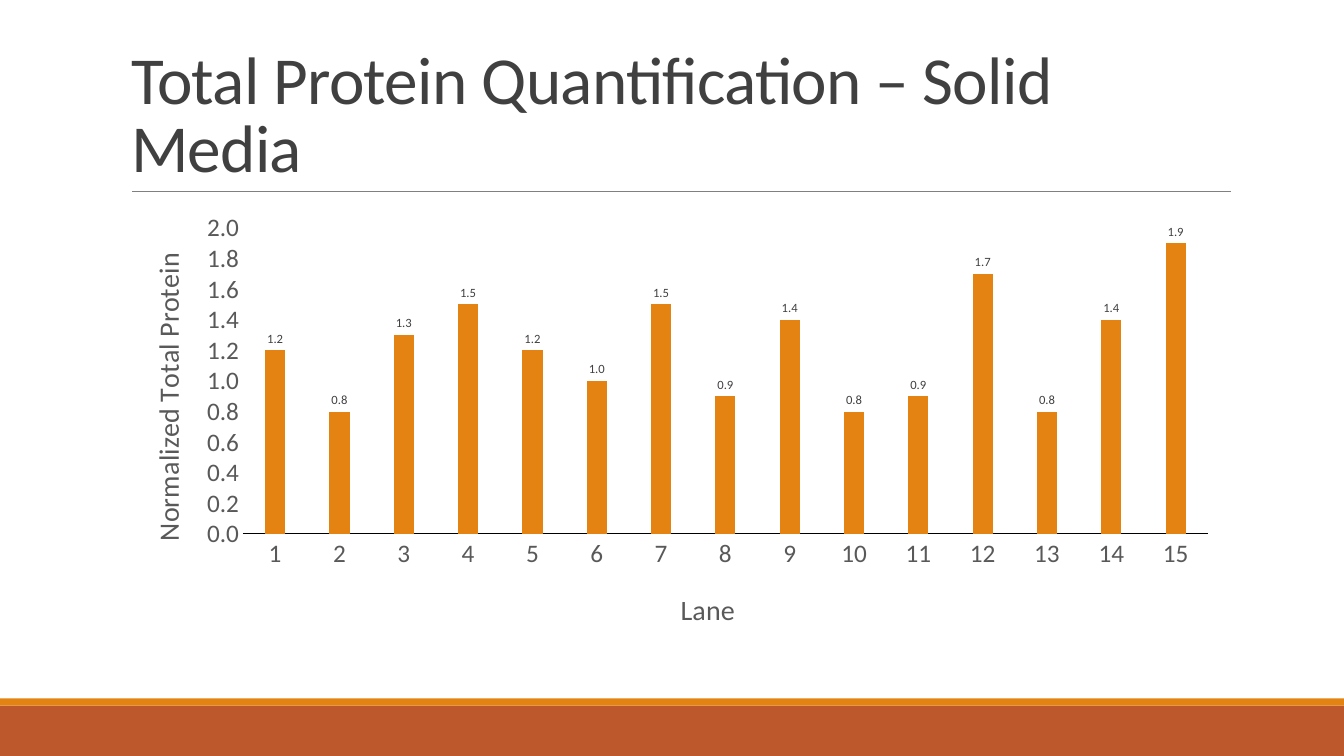
from lxml import etree
from pptx import Presentation
from pptx.chart.data import CategoryChartData
from pptx.dml.color import RGBColor
from pptx.enum import chart as ch, shapes, text
from pptx.oxml import ns
from pptx.util import Inches, Pt

W, H = 13.33, 7.5
FONT = "Calibri"
ORANGE, RUST, DARK, GREY = "E48312", "BD582C", "404040", "595959"
TITLE = "Total Protein Quantification – Solid Media"
LEVELS = [1.2, 0.8, 1.3, 1.5, 1.2, 1.0, 1.5, 0.9,
          1.4, 0.8, 0.9, 1.7, 0.8, 1.4, 1.9]
BANDS = [(7.0, 0.5, RUST), (6.93, 0.07, ORANGE)]  # top, height, fill
LEFT, WIDE = 1.2, 11
# shares of the chart's size
PLOT = {"x": 0.11, "y": 0.055, "w": 0.87, "h": 0.69}
LANE = {"x": 0.5, "y": 0.86}
PROTEIN = {"x": 0.02, "y": 0.1}


def rgb(code):
    return RGBColor.from_string(code)


def style(font, size, color):
    font.name, font.size, font.bold = FONT, Pt(size), False
    font.color.rgb = rgb(color)


def place(parent, spots, inner=False):
    """Fix a chart part at shares of the chart's size."""
    layout = parent.find(ns.qn("c:layout"))
    if layout is None:
        layout = etree.Element(ns.qn("c:layout"))
        parent.insert(0, layout)
    manual = etree.SubElement(layout, ns.qn("c:manualLayout"))
    rules = {"layoutTarget": "inner"} if inner else {}
    rules.update(xMode="edge", yMode="edge", **spots)
    for name, val in rules.items():
        etree.SubElement(manual, ns.qn("c:" + name)).set("val", str(val))


def set_axis(axis, name, spots):
    axis.has_major_gridlines = False
    axis.major_tick_mark = axis.minor_tick_mark = ch.XL_TICK_MARK.NONE
    style(axis.tick_labels.font, 18, GREY)
    par = axis.axis_title.text_frame.paragraphs[0]
    par.text = name
    style(par.font, 20, GREY)
    place(axis.axis_title._element, spots)


def add_frame(slide):
    for top, high, fill in BANDS:
        band = slide.shapes.add_shape(
            shapes.MSO_SHAPE.RECTANGLE, 0, Inches(top), Inches(W), Inches(high))
        band.shadow.inherit = False
        band.fill.solid()
        band.fill.fore_color.rgb = rgb(fill)
        band.line.fill.background()
    rule = slide.shapes.add_connector(
        shapes.MSO_CONNECTOR.STRAIGHT,
        Inches(1.31), Inches(1.9), Inches(12.21), Inches(1.9))
    rule.line.color.rgb = rgb("808080")
    rule.line.width = Pt(0.5)
    etree.SubElement(rule._element.spPr, ns.qn("a:effectLst"))


def add_title(slide):
    title = slide.shapes.title
    title.left, title.top = Inches(LEFT), Inches(0.31)
    title.width, title.height = Inches(WIDE), Inches(1.59)
    frame = title.text_frame
    frame.text = TITLE
    frame.auto_size = text.MSO_AUTO_SIZE.NONE
    frame.vertical_anchor = text.MSO_ANCHOR.BOTTOM
    par = frame.paragraphs[0]
    par.alignment = text.PP_ALIGN.LEFT
    par.line_spacing = 0.85
    style(par.font, 48, DARK)
    par.runs[0].font._element.set("spc", "-50")


def add_bars(slide):
    data = CategoryChartData(number_format="0.0")
    data.categories = [str(n) for n in range(1, len(LEVELS) + 1)]
    data.add_series("Series 1", LEVELS)
    chart = slide.shapes.add_chart(
        ch.XL_CHART_TYPE.COLUMN_CLUSTERED, Inches(LEFT), Inches(2.02),
        Inches(WIDE), Inches(4.4), data).chart
    chart.has_legend = chart.has_title = False
    style(chart.font, 10, "000000")
    place(chart._chartSpace.chart.plotArea, PLOT, inner=True)

    lanes, scale = chart.category_axis, chart.value_axis
    set_axis(lanes, "Lane", LANE)
    lanes.format.line.color.rgb = rgb("000000")
    lanes.format.line.width = Pt(0.75)
    set_axis(scale, "Normalized Total Protein", PROTEIN)
    scale.format.line.fill.background()
    scale.minimum_scale, scale.maximum_scale, scale.major_unit = 0, 2, 0.2
    scale.tick_labels.number_format = "0.0"
    scale.tick_labels.number_format_is_linked = False

    plot = chart.plots[0]
    plot.gap_width, plot.overlap, plot.vary_by_categories = 219, -27, False
    bars = plot.series[0]
    bars.format.fill.solid()
    bars.format.fill.fore_color.rgb = rgb(ORANGE)
    tags = bars.data_labels
    tags.show_value = True
    tags.position = ch.XL_LABEL_POSITION.OUTSIDE_END
    tags.number_format, tags.number_format_is_linked = "0.0", False
    style(tags.font, 9, DARK)


def main():
    deck = Presentation()
    deck.slide_width, deck.slide_height = Inches(W), Inches(H)
    slide = deck.slides.add_slide(deck.slide_layouts[5])
    add_frame(slide)
    add_title(slide)
    add_bars(slide)
    deck.save("out.pptx")


if __name__ == "__main__":
    main()
